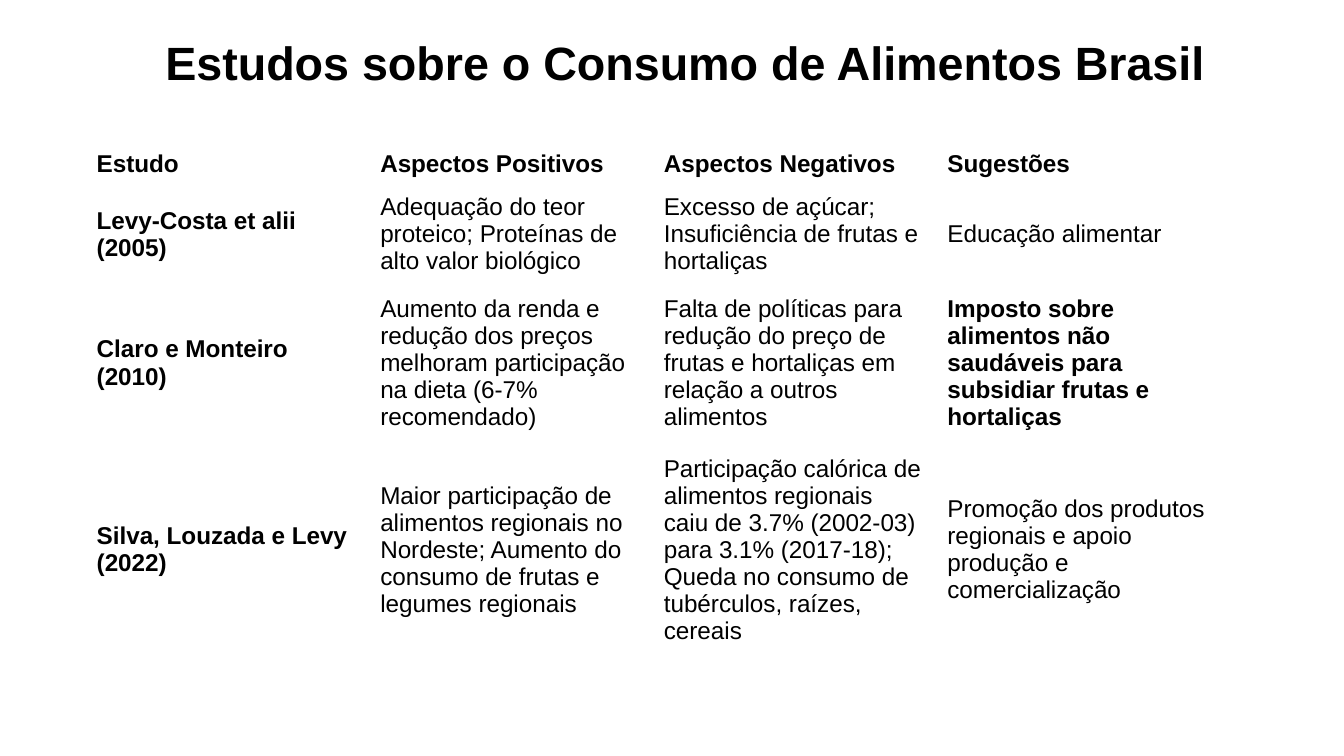
from pptx import Presentation
from pptx.dml.color import RGBColor
from pptx.enum.text import MSO_ANCHOR, PP_ALIGN
from pptx.util import Inches, Pt

MIDDLE, TOP = MSO_ANCHOR.MIDDLE, MSO_ANCHOR.TOP
LEFT = PP_ALIGN.LEFT
TITLE = "Estudos sobre o Consumo de Alimentos Brasil"
HEAD = ["Estudo", "Aspectos Positivos", "Aspectos Negativos", "Sugestões"]
STUDIES = [
    ["Levy-Costa et alii (2005)",
     "Adequação do teor proteico; Proteínas de alto valor biológico",
     "Excesso de açúcar; Insuficiência de frutas e hortaliças",
     "Educação alimentar"],
    ["Claro e Monteiro (2010)",
     "Aumento da renda e redução dos preços melhoram participação na dieta (6-7% recomendado)",
     "Falta de políticas para redução do preço de frutas e hortaliças em relação a outros alimentos",
     "Imposto sobre alimentos não saudáveis para subsidiar frutas e hortaliças"],
    ["Silva, Louzada e Levy (2022)",
     "Maior participação de alimentos regionais no Nordeste; Aumento do consumo de frutas e legumes regionais",
     "Participação calórica de alimentos regionais caiu de 3.7% (2002-03) para 3.1% (2017-18); "
     "Queda no consumo de tubérculos, raízes, cereais",
     "Promoção dos produtos regionais e apoio produção e comercialização"],
]
KEY = (2, 3)
COL = 2.11
ROWS = [0.3, 0.74, 1.18, 1.6]


def style(para, size, bold, color="000000"):
    """Set the font and alignment of a paragraph."""
    para.alignment = LEFT
    font = para.font
    font.name, font.size, font.bold = "Arial", Pt(size), bold
    font.color.rgb = RGBColor.from_string(color)


def add_title(slide):
    """Place the slide title."""
    title = slide.shapes.title
    title.left, title.top = Inches(1.13), Inches(0.2)
    title.width, title.height = Inches(8.36), Inches(0.52)
    frame = title.text_frame
    frame.text = TITLE
    frame.vertical_anchor = TOP
    frame.word_wrap = True
    style(frame.paragraphs[0], 25, True)


def add_studies(slide):
    """Place the table of studies."""
    data = [HEAD] + STUDIES
    frame = slide.shapes.add_table(
        len(data), len(HEAD), Inches(0.63), Inches(1.07),
        Inches(COL * len(HEAD)), Inches(sum(ROWS)))
    table = frame.table
    table.horz_banding = table.first_row = False
    for col in table.columns:
        col.width = Inches(COL)
    for r, texts in enumerate(data):
        table.rows[r].height = Inches(ROWS[r])
        for c, text in enumerate(texts):
            cell = table.cell(r, c)
            cell.text = text
            cell.fill.background()
            cell.vertical_anchor = MIDDLE
            cell.margin_left = cell.margin_right = Inches(0.09)
            cell.margin_top = cell.margin_bottom = Inches(0.05)
            bold = r == 0 or c == 0 or (r, c) == KEY
            style(cell.text_frame.paragraphs[0], 13, bold)
    frame.width = frame.height = Inches(3.28)


def main():
    """Build and save the slide."""
    prs = Presentation()
    prs.slide_width = Inches(10)
    prs.slide_height = prs.slide_width * 9 // 16
    slide = prs.slides.add_slide(prs.slide_layouts[5])
    add_studies(slide)
    add_title(slide)
    prs.save("out.pptx")


if __name__ == "__main__":
    main()
